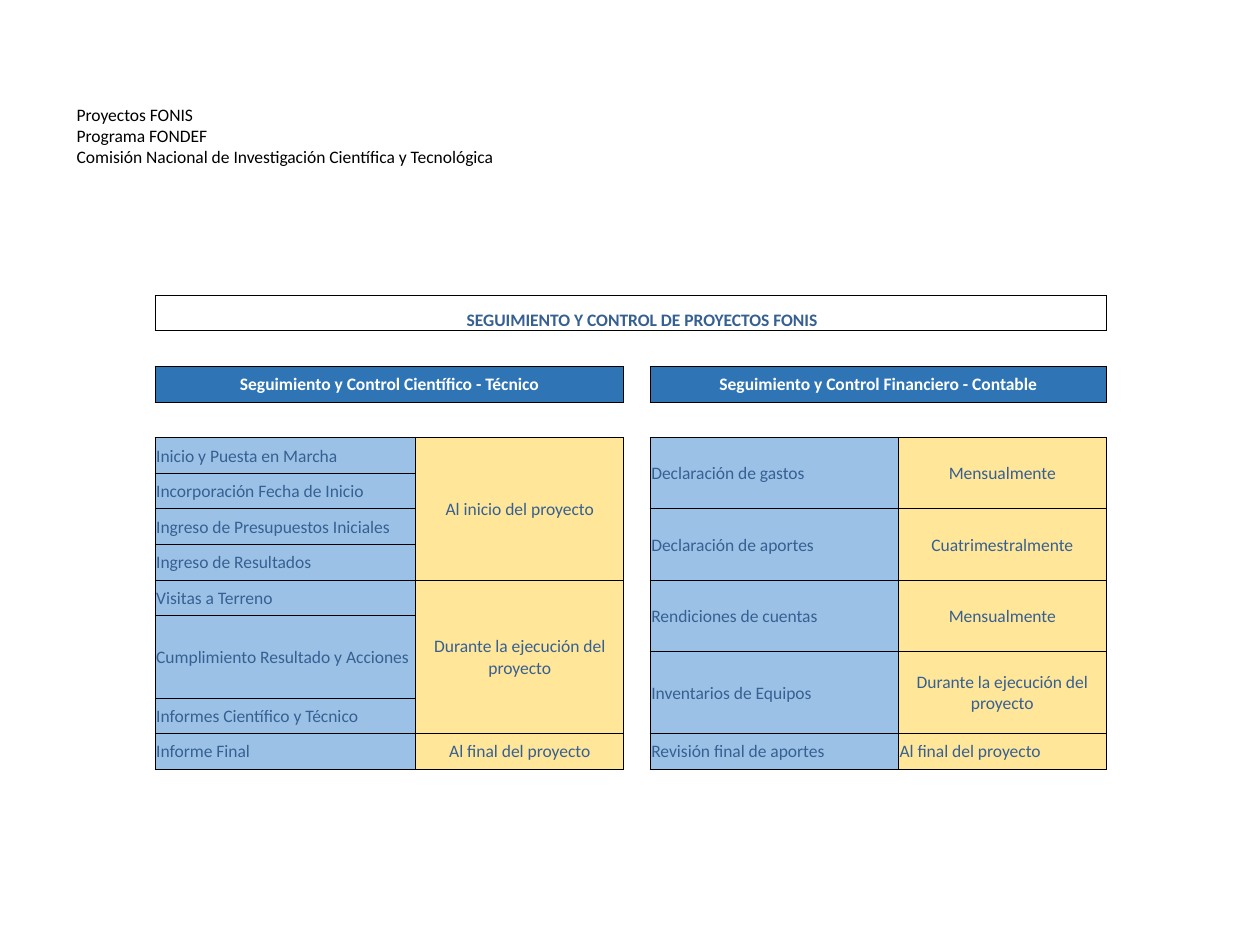
"""Build the FONIS project follow-up slide."""
from dataclasses import dataclass

from lxml.etree import SubElement
from pptx import Presentation
from pptx.dml.color import RGBColor as Rgb
from pptx.enum.text import MSO_ANCHOR as Anchor, PP_ALIGN as Align
from pptx.oxml.ns import qn
from pptx.util import Inches, Pt


@dataclass(frozen=True)
class Theme:
    font: str = "Calibri"
    size: int = 10
    line: float = 0.5
    black: str = "000000"
    white: str = "FFFFFF"
    ink: str = "376092"
    head: str = "2F75B5"
    task: str = "9BC2E6"
    time: str = "FFE699"


THEME = Theme()
COLS = [0.73, 2.07, 1.65, 0.21, 1.97, 1.65, 0.73]
ROWS, TALL, TALL_ROW = 15, 0.37, 11
ROW = (4.33 - TALL) / (ROWS - 1)
START = 5
INTRO = ("Proyectos FONIS", "Programa FONDEF",
         "Comisión Nacional de Investigación Científica y Tecnológica")
TITLE = "SEGUIMIENTO Y CONTROL DE PROYECTOS FONIS"
HEADS = {1: "Seguimiento y Control Científico - Técnico",
         4: "Seguimiento y Control Financiero - Contable"}
TASKS = {
    1: [("Inicio y Puesta en Marcha", 1), ("Incorporación Fecha de Inicio", 1),
        ("Ingreso de Presupuestos Iniciales", 1), ("Ingreso de Resultados", 1),
        ("Visitas a Terreno", 1), ("Cumplimiento Resultado y Acciones", 2),
        ("Informes Científico y Técnico", 1), ("Informe Final", 1)],
    4: [("Declaración de gastos", 2), ("Declaración de aportes", 2),
        ("Rendiciones de cuentas", 2), ("Inventarios de Equipos", 2),
        ("Revisión final de aportes", 1)],
}
TIMES = {
    2: [("Al inicio del proyecto", 4), ("Durante la ejecución del proyecto", 4),
        ("Al final del proyecto", 1)],
    5: [("Mensualmente", 2), ("Cuatrimestralmente", 2), ("Mensualmente", 2),
        ("Durante la ejecución del proyecto", 2), ("Al final del proyecto", 1)],
}


def style(para, color, bold=False, align=Align.LEFT):
    """Set the type of a paragraph."""
    para.alignment = align
    font = para.font
    font.name, font.size, font.bold = THEME.font, Pt(THEME.size), bold
    font.color.rgb = Rgb.from_string(color)


def add_intro(slide):
    """Add the lines that name the programme."""
    box = slide.shapes.add_textbox(Inches(0.51), Inches(0.52), Inches(7.81), Inches(1.11))
    frame = box.text_frame
    frame.word_wrap = True
    frame.vertical_anchor = Anchor.MIDDLE
    frame.text = "\v".join(INTRO)
    style(frame.paragraphs[0], THEME.black)


def add_grid(slide):
    """Add the plain table with its row and column sizes."""
    frame = slide.shapes.add_table(ROWS, len(COLS), Inches(0.5), Inches(2.06),
                                   Inches(9), Inches(4.34))
    grid = frame.table
    grid.first_row = grid.horz_banding = False
    no_style = "{2D5ABB26-0587-4C30-8999-92F81FD0307C}"
    grid._tbl.tblPr.find(qn("a:tableStyleId")).text = no_style
    for col, width in zip(grid.columns, COLS):
        col.width = Inches(width)
    for num, row in enumerate(grid.rows):
        row.height = Inches(TALL if num == TALL_ROW else ROW)
    for cell in grid.iter_cells():
        cell.margin_left = cell.margin_right = cell.margin_top = Inches(0.01)
        cell.margin_bottom = 0
        cell.fill.background()
        para = cell.text_frame.paragraphs[0]
        SubElement(para._p, qn("a:endParaRPr"), sz=str(THEME.size * 100))
    return grid


def edge(cell):
    """Draw the four borders of a cell."""
    props = cell._tc.get_or_add_tcPr()
    for pos, side in enumerate(("lnL", "lnR", "lnT", "lnB")):
        line = props.makeelement(qn(f"a:{side}"), {"w": str(Pt(THEME.line))})
        fill = SubElement(line, qn("a:solidFill"))
        SubElement(fill, qn("a:srgbClr"), val=THEME.black)
        props.insert(pos, line)


def join(grid, row, col, high, wide):
    """Merge a block of cells and return its first cell."""
    cell = grid.cell(row, col)
    if high * wide > 1:
        cell.merge(grid.cell(row + high - 1, col + wide - 1))
    return cell


def fill_block(grid, row, col, text, high=1, wide=1, fill=None, color=THEME.ink,
               bold=False, align=Align.CENTER):
    """Fill a bordered block of cells with text."""
    cell = join(grid, row, col, high, wide)
    for down in range(high):
        for over in range(wide):
            edge(grid.cell(row + down, col + over))
    if fill:
        cell.fill.solid()
        cell.fill.fore_color.rgb = Rgb.from_string(fill)
    cell.vertical_anchor = Anchor.MIDDLE
    cell.text = text
    style(cell.text_frame.paragraphs[0], color, bold, align)
    return cell


def fill_list(grid, col, items, fill, align):
    """Stack labelled blocks down a column."""
    row = START
    for text, high in items:
        fill_block(grid, row, col, text, high, fill=fill, align=align)
        row += high


def main():
    """Build and save the slide."""
    deck = Presentation()
    deck.slide_width, deck.slide_height = Inches(10), Inches(7.5)
    slide = deck.slides.add_slide(deck.slide_layouts[6])
    add_intro(slide)
    grid = add_grid(slide)
    title = fill_block(grid, 1, 1, TITLE, wide=5, bold=True)
    title.vertical_anchor = Anchor.BOTTOM
    title.margin_left = Inches(0.19)
    for col, text in HEADS.items():
        join(grid, 2, col, 1, 2)
        fill_block(grid, 3, col, text, wide=2, fill=THEME.head,
                   color=THEME.white, bold=True)
    join(grid, START, 3, 2, 1)
    for col, items in TASKS.items():
        fill_list(grid, col, items, THEME.task, Align.LEFT)
    for col, items in TIMES.items():
        fill_list(grid, col, items, THEME.time, Align.CENTER)
    last = grid.cell(ROWS - 2, 5).text_frame.paragraphs[0]
    last.alignment = Align.LEFT
    deck.save("out.pptx")


if __name__ == "__main__":
    main()
